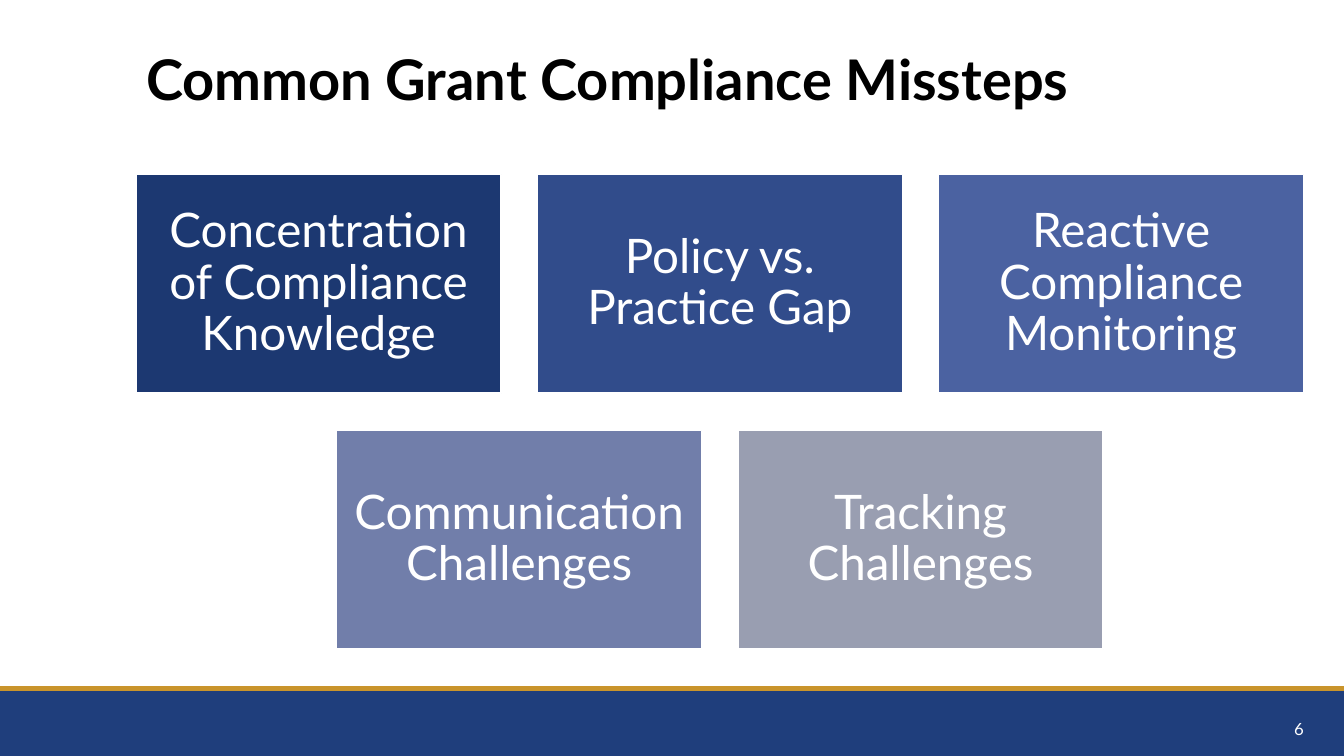
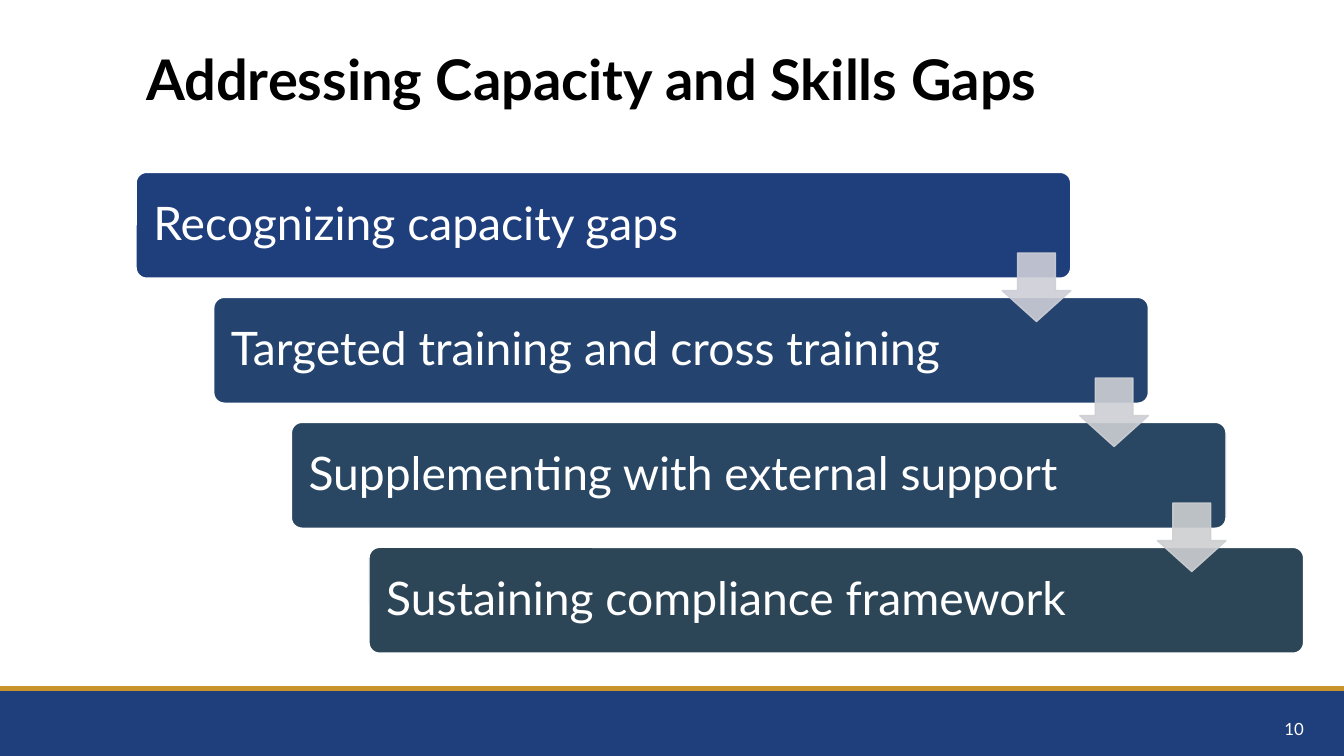
from lxml.etree import SubElement
from pptx import Presentation
from pptx.dml.color import RGBColor
from pptx.enum.shapes import MSO_CONNECTOR as Connector, MSO_SHAPE as Shape
from pptx.enum.text import MSO_ANCHOR as Anchor, MSO_AUTO_SIZE as AutoSize, PP_ALIGN as Align
from pptx.oxml.ns import qn
from pptx.util import Inches, Pt

COLORS = {"navy": "1F3E7C", "gold": "C9942B", "black": "000000", "white": "FFFFFF"}
FONT = "Lato"
SLIDE_WIDTH, SLIDE_HEIGHT, BAND_TOP = 13.33, 7.5, 6.83
CONTENT_LEFT, CONTENT_RIGHT = 1.35, 12.93

MISSTEPS = [
    [
        ("Concentration of Compliance Knowledge", "1C3871"),
        ("Policy vs. Practice Gap", "314C8B"),
        ("Reactive Compliance Monitoring", "4B62A1"),
    ],
    [
        ("Communication Challenges", "717EAA"),
        ("Tracking Challenges", "999EB1"),
    ],
]
STEPS = [
    ("Recognizing capacity gaps", COLORS["navy"]),
    ("Targeted training and cross training", "24446F"),
    ("Supplementing with external support", "294663"),
    ("Sustaining compliance framework", "2D4657"),
]
ARROW_FILLS = ["CDCED7", "CDCFD4", "CDCFD1"]


def apply(target, values):
    """Set each named attribute of the target."""
    for name, value in values.items():
        setattr(target, name, value)


def write(box, text, size, color, align=Align.LEFT, bold=False, spacing=0.9, inset=None):
    """Fill a shape with one formatted paragraph, centred vertically."""
    frame = box.text_frame
    apply(frame, {"text": text, "word_wrap": True, "auto_size": AutoSize.NONE,
                  "vertical_anchor": Anchor.MIDDLE})
    if inset:
        apply(frame, {"margin_left": Inches(inset), "margin_right": Inches(inset)})
    para = frame.paragraphs[0]
    apply(para, {"alignment": align, "line_spacing": spacing})
    span = para.runs[0]
    apply(span.font, {"name": FONT, "size": Pt(size), "bold": bold})
    span.font.color.rgb = RGBColor.from_string(color)


def add_box(page, kind, place, fill, line=None, adjustments=()):
    """Add a filled preset shape, outlined when a line colour is given."""
    box = page.shapes.add_shape(kind, *map(Inches, place))
    box.shadow.inherit = False
    box.fill.solid()
    box.fill.fore_color.rgb = RGBColor.from_string(fill)
    if line:
        box.line.color.rgb = RGBColor.from_string(line)
        box.line.width = Pt(1)
    else:
        box.line.fill.background()
    for index, value in enumerate(adjustments):
        box.adjustments[index] = value
    return box


def set_opacity(box, percent):
    """Make the fill and outline of a shape partly transparent."""
    for color in box.element.spPr.iter(qn("a:srgbClr")):
        SubElement(color, qn("a:alpha"), val=str(percent * 1000))


def add_footer(page, number):
    """Add the footer band, its gold rule and the page number."""
    add_box(page, Shape.RECTANGLE,
            (0, BAND_TOP, SLIDE_WIDTH, SLIDE_HEIGHT - BAND_TOP), COLORS["navy"])
    rule = page.shapes.add_connector(
        Connector.STRAIGHT, *map(Inches, (0, BAND_TOP, SLIDE_WIDTH, BAND_TOP)))
    rule.line.color.rgb = RGBColor.from_string(COLORS["gold"])
    rule.line.width = Pt(3)
    SubElement(rule.element.spPr, qn("a:effectLst"))
    box = page.shapes.add_textbox(*map(Inches, (10.03, 7.03, 3, 0.4)))
    write(box, str(number), 12, COLORS["white"], Align.RIGHT, spacing=1.0)


def add_page(deck, title, number):
    """Add a slide with the shared title and footer."""
    page = deck.slides.add_slide(deck.slide_layouts.get_by_name("Title Only"))
    box = page.shapes.title
    place = map(Inches, (CONTENT_LEFT, 0.41, 11.68, 0.81))
    apply(box, dict(zip(("left", "top", "width", "height"), place)))
    write(box, title, 40, COLORS["black"], bold=True)
    add_footer(page, number)
    return page


def add_tiles(page, rows):
    """Add rows of tiles, each row centred in the content area."""
    top, width, height, gap = 1.73, 3.62, 2.17, 0.36
    center = (CONTENT_LEFT + CONTENT_RIGHT) / 2
    for row, tiles in enumerate(rows):
        left = center - (len(tiles) * (width + gap) - gap) / 2
        for column, (text, fill) in enumerate(tiles):
            place = (left + column * (width + gap), top + row * 2.54, width, height)
            tile = add_box(page, Shape.RECTANGLE, place, fill, COLORS["white"])
            write(tile, text, 34, COLORS["white"], Align.CENTER, inset=0.14)


def add_staircase(page, steps, arrow_fills):
    """Add descending bars and the arrows that lead from each to the next."""
    top, width, height, arrow = 1.71, 9.27, 1.05, 0.68
    across = (CONTENT_RIGHT - CONTENT_LEFT - width) / (len(steps) - 1)
    down = 1.24
    for index, (text, fill) in enumerate(steps):
        place = (CONTENT_LEFT + index * across, top + index * down, width, height)
        bar = add_box(page, Shape.ROUNDED_RECTANGLE, place, fill, COLORS["white"], [0.1])
        write(bar, text, 33, COLORS["white"], inset=0.14)
    for index, fill in enumerate(arrow_fills):
        left = CONTENT_LEFT + width - arrow + index * across
        place = (left, 2.51 + index * down, arrow, arrow)
        pointer = add_box(page, Shape.DOWN_ARROW, place, fill, fill, [0.55, 0.45])
        set_opacity(pointer, 90)


def main():
    """Build and save the deck."""
    deck = Presentation()
    apply(deck, {"slide_width": Inches(SLIDE_WIDTH), "slide_height": Inches(SLIDE_HEIGHT)})
    add_tiles(add_page(deck, "Common Grant Compliance Missteps", 6), MISSTEPS)
    add_staircase(add_page(deck, "Addressing Capacity and Skills Gaps", 10), STEPS, ARROW_FILLS)
    deck.save("out.pptx")


if __name__ == "__main__":
    main()
